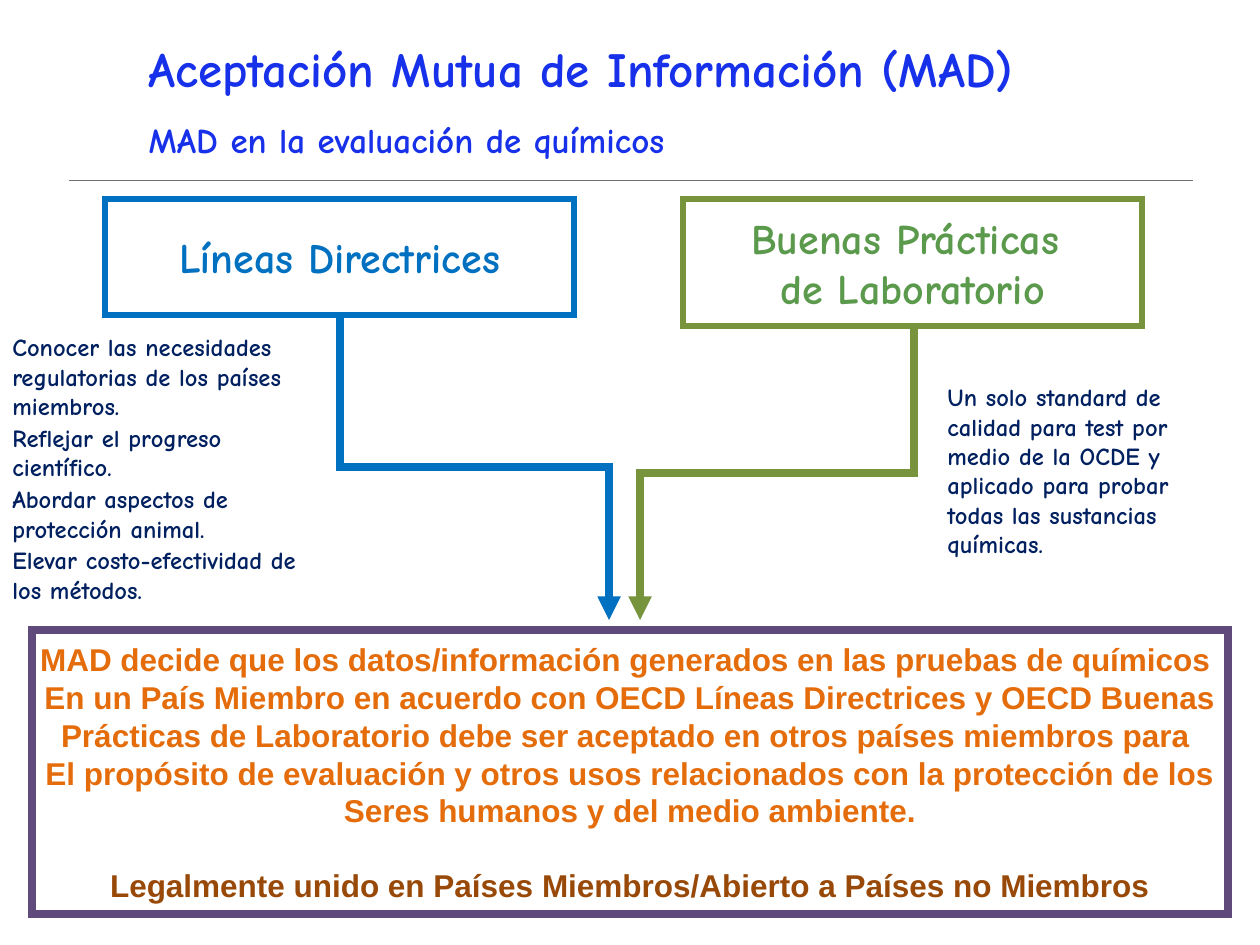
"""Builds the slide on mutual acceptance of data in chemical assessment."""
from dataclasses import dataclass

import pptx
import pptx.dml.color
import pptx.enum.shapes
import pptx.enum.text
import pptx.oxml
import pptx.oxml.ns
import pptx.util


@dataclass(frozen=True)
class Theme:
    hand: str = "Comic Neue"
    plain: str = "Arial"
    title: str = "1730E9"
    rule: str = "727272"
    blue: str = "0070C0"
    green: str = "77933C"
    green_text: str = "5B9A4C"
    purple: str = "604A7B"
    orange: str = "E46C0A"
    brown: str = "984807"
    navy: str = "002060"
    title_size: int = 28
    heading_size: int = 24
    subtitle_size: int = 20
    decision_size: int = 18
    note_size: int = 14
    hairline: float = 0.5
    border: float = 3
    heavy: float = 4.5


THEME = Theme()
CENTER = pptx.enum.text.PP_ALIGN.CENTER
LEFT = pptx.enum.text.PP_ALIGN.LEFT
TOP = pptx.enum.text.MSO_ANCHOR.TOP
MIDDLE = pptx.enum.text.MSO_ANCHOR.MIDDLE

GUIDELINE_NOTES = [
    "Conocer las necesidades regulatorias de los países miembros.",
    "Reflejar el progreso científico.",
    "Abordar aspectos de protección animal.",
    "Elevar costo-efectividad de los métodos.",
]
PRACTICE_NOTES = [
    "Un solo standard de calidad para test por medio de la OCDE y aplicado "
    "para probar todas las sustancias químicas.",
]
DECISION = [
    "MAD decide que los datos/información generados en las pruebas de químicos ",
    "En un País Miembro en acuerdo con OECD Líneas Directrices y OECD Buenas",
    "Prácticas de Laboratorio debe ser aceptado en otros países miembros para ",
    "El propósito de evaluación y otros usos relacionados con la protección de los",
    "Seres humanos y del medio ambiente.",
    "Legalmente unido en Países Miembros/Abierto a Países no Miembros",
]


def px(length):
    """Turn pixels into EMU."""
    return pptx.util.Emu(round(length * 914400 / 126))


def rgb(value):
    """Turn a hex string into a colour."""
    return pptx.dml.color.RGBColor.from_string(value)


def add_xml(parent, tag, attributes=""):
    """Append an empty drawing element to a parent."""
    names = pptx.oxml.ns.nsdecls("a")
    parent.append(pptx.oxml.parse_xml(f"<a:{tag} {names} {attributes}/>"))


def format_para(para, font, size, color, align=LEFT, before=0):
    """Set the spacing of a paragraph and the look of its runs."""
    para.alignment = align
    para.space_before = pptx.util.Pt(before)
    for span in para.runs:
        span.font.name = font
        span.font.size = pptx.util.Pt(size)
        span.font.bold = True
        span.font.color.rgb = rgb(color)


def fill_text(frame, lines, font, size, color, align=LEFT, gap=0):
    """Write one paragraph for each line, with a gap between them."""
    frame.text = "\n".join(lines)
    for index, para in enumerate(frame.paragraphs):
        format_para(para, font, size, color, align, gap if index else 0)


def format_line(shape, color, width):
    """Give a shape a solid line with square corners."""
    shape.line.color.rgb = rgb(color)
    shape.line.width = pptx.util.Pt(width)
    add_xml(shape.line._get_or_add_ln(), "miter", 'lim="800000"')


def set_title(page, title, subtitle):
    """Place the title and its second line."""
    box = page.shapes.title
    box.left, box.top, box.width, box.height = px(136), px(32), px(1124), px(136)
    frame = box.text_frame
    frame.vertical_anchor = TOP
    fill_text(frame, [title, subtitle], THEME.hand, THEME.title_size, THEME.title)
    format_para(frame.paragraphs[1], THEME.hand, THEME.subtitle_size,
                THEME.title, before=12)


def add_box(page, place, border, width, lines, font, size, color):
    """Add an outlined box with centred text."""
    box = page.shapes.add_shape(
        pptx.enum.shapes.MSO_SHAPE.RECTANGLE, *map(px, place))
    box.shadow.inherit = False
    box.fill.background()
    format_line(box, border, width)
    frame = box.text_frame
    frame.word_wrap = False
    frame.vertical_anchor = MIDDLE
    fill_text(frame, lines, font, size, color, CENTER)
    return box


def add_note(page, place, lines):
    """Add a wrapped text box of small notes."""
    frame = page.shapes.add_textbox(*map(px, place)).text_frame
    frame.word_wrap = True
    fill_text(frame, lines, THEME.hand, THEME.note_size, THEME.navy, gap=1.4)


def add_connector(page, kind, begin, end, color, width):
    """Add a connector without a shadow."""
    line = page.shapes.add_connector(kind, *map(px, begin + end))
    format_line(line, color, width)
    add_xml(line._element.spPr, "effectLst")
    return line


def add_down_elbow(page, begin, end, color):
    """Add a bent arrow that leaves and arrives vertically."""
    middle_x, middle_y = (begin[0] + end[0]) / 2, (begin[1] + end[1]) / 2
    half_width, half_height = (end[1] - begin[1]) / 2, abs(end[0] - begin[0]) / 2
    rightward = end[0] > begin[0]
    reach = half_width if rightward else -half_width
    line = add_connector(
        page, pptx.enum.shapes.MSO_CONNECTOR.ELBOW,
        (middle_x + reach, middle_y - half_height),
        (middle_x - reach, middle_y + half_height), color, THEME.heavy)
    turn = 270 if rightward else 90
    line._element.spPr.find(pptx.oxml.ns.qn("a:xfrm")).set("rot", str(turn * 60000))
    add_xml(line.line._get_or_add_ln(), "tailEnd", 'type="triangle"')


def main():
    """Build and save the slide."""
    deck = pptx.Presentation()
    deck.slide_width, deck.slide_height = px(1260), px(945)
    page = deck.slides.add_slide(deck.slide_layouts.get_by_name("Title Only"))

    set_title(page, "Aceptación Mutua de Información (MAD)",
              "MAD en la evaluación de químicos")
    add_connector(page, pptx.enum.shapes.MSO_CONNECTOR.STRAIGHT,
                  (69, 180), (1193, 180), THEME.rule, THEME.hairline)
    add_box(page, (105, 199, 469, 116), THEME.blue, THEME.border,
            ["Líneas Directrices"], THEME.hand, THEME.heading_size, THEME.blue)
    add_box(page, (683, 199, 459, 127), THEME.green, THEME.border,
            ["Buenas Prácticas ", "de Laboratorio"],
            THEME.hand, THEME.heading_size, THEME.green_text)
    decision = add_box(page, (32, 630, 1196, 284), THEME.purple, THEME.heavy,
                       DECISION, THEME.plain, THEME.decision_size, THEME.orange)
    format_para(decision.text_frame.paragraphs[-1], THEME.plain,
                THEME.decision_size, THEME.brown, CENTER, before=21)
    add_down_elbow(page, (340, 315), (609, 620), THEME.blue)
    add_down_elbow(page, (914, 326), (640, 620), THEME.green)
    add_note(page, (0, 326, 326, 300), GUIDELINE_NOTES)
    add_note(page, (935, 376, 284, 221), PRACTICE_NOTES)

    deck.save("out.pptx")


if __name__ == "__main__":
    main()
